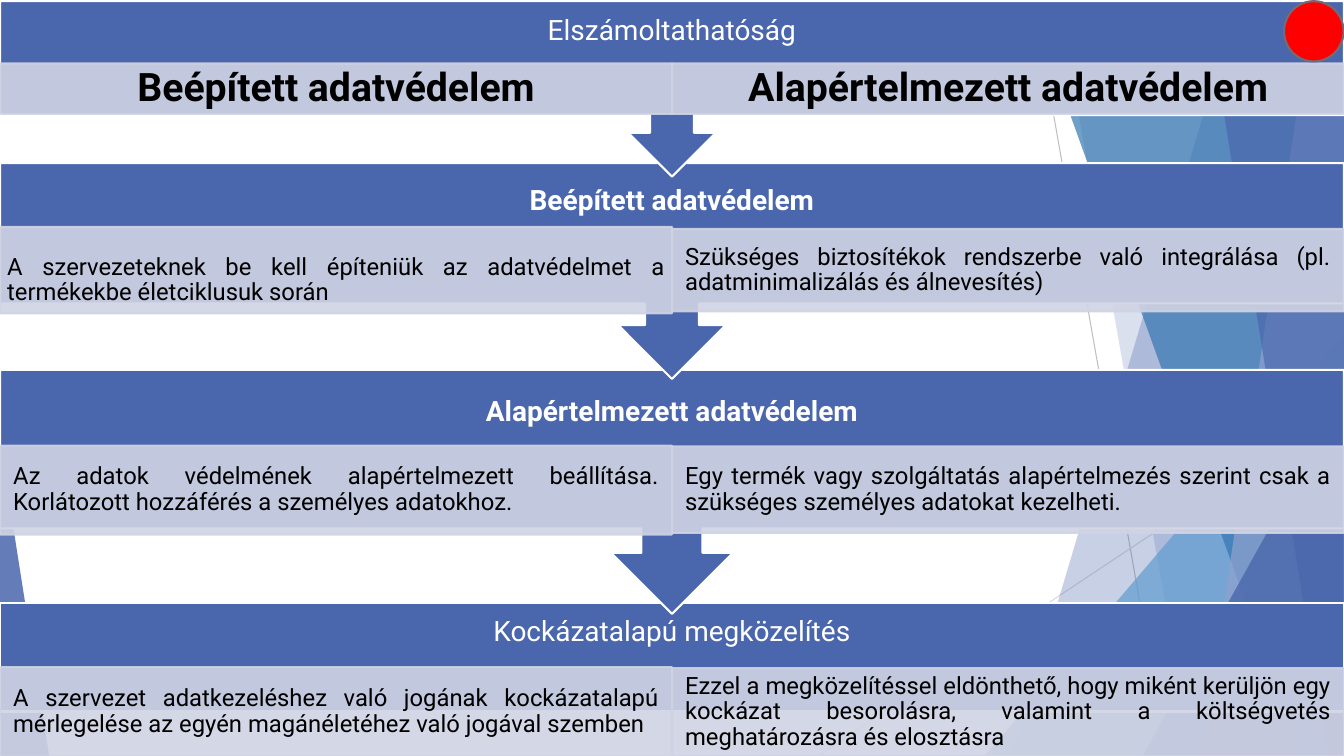
"""Builds the accountability slide: four stacked bands with paired cells over a faceted backdrop."""
from lxml.etree import SubElement
from pptx import Presentation
from pptx.dml.color import RGBColor
from pptx.enum.shapes import MSO_CONNECTOR as Connector, MSO_SHAPE as Shape
from pptx.enum.text import MSO_ANCHOR as Anchor, PP_ALIGN as Align
from pptx.oxml.ns import qn
from pptx.util import Cm, Pt

WIDTH, HEIGHT = 33.87, 19.05
HALF = WIDTH / 2
BLUE, PALE, WHITE, BLACK = "4A66AC", "D0D3E3", "FFFFFF", "000000"

RAYS = [((26.04, 0), (29.41, HEIGHT), "BFBFBF"), ((WIDTH, 10.24), (20.62, HEIGHT), "D9D9D9")]
FACETS = [
    ("panel", (31.19, 25.5), BLUE, 30),
    ("panel", (26.67, 30.05), BLUE, 20),
    ("right", (24.82, 8.46, 9.04, 10.59), "629DD1", 72),
    ("panel", (25.93, 32.79), "3477B2", 70),
    ("panel", (33.1, 30.28), "90A2CF", 70),
    ("panel", (30.38, 33.48), BLUE, 65),
    ("right", (28.8, 9.98, 5.05, 9.07), BLUE, 80),
    ("left", (0, 11.15, 1.24, 7.9), BLUE, 85),
]

HEAD = {"size": 20, "color": WHITE, "align": Align.CENTER, "insets": (0.41, 0.41, 0.41, 0.41)}
BOLD_HEAD = HEAD | {"bold": True}
BODY = {"size": 17, "color": BLACK, "align": Align.JUSTIFY, "insets": (0.33, 0.05, 0.33, 0.05)}
LOWERED = BODY | {"insets": (0.18, 0.54, 0.18, 0.03)}
TITLE = {"size": 28, "color": BLACK, "align": Align.CENTER, "bold": True,
         "insets": (0.56, 0.1, 0.56, 0.1)}

BANDS = [
    {"shape": Shape.DOWN_ARROW_CALLOUT, "top": 0.03, "height": 4.42,
     "head": ("Elszámoltathatóság", 1.55, HEAD),
     "cells": [("Beépített adatvédelem", 1.6, 1.27, TITLE),
               ("Alapértelmezett adatvédelem", 1.6, 1.27, TITLE)]},
    {"shape": Shape.DOWN_ARROW_CALLOUT, "top": 4.11, "height": 5.44,
     "head": ("Beépített adatvédelem", 1.91, BOLD_HEAD),
     "cells": [("A szervezeteknek be kell építeniük az adatvédelmet a termékekbe "
                "életciklusuk során", 5.72, 2.18, LOWERED),
               ("Szükséges biztosítékok rendszerbe való integrálása (pl. adatminimalizálás "
                "és álnevesítés)", 5.77, 2.08, BODY)]},
    {"shape": Shape.DOWN_ARROW_CALLOUT, "top": 9.32, "height": 6.15,
     "head": ("Alapértelmezett adatvédelem", 2.16, BOLD_HEAD),
     "cells": [("Az adatok védelmének alapértelmezett beállítása. Korlátozott hozzáférés "
                "a személyes adatokhoz.", 11.23, 2.24, BODY),
               ("Egy termék vagy szolgáltatás alapértelmezés szerint csak a szükséges "
                "személyes adatokat kezelheti.", 11.25, 2.18, BODY)]},
    {"shape": Shape.RECTANGLE, "top": 15.19, "height": 2.74,
     "head": ("Kockázatalapú megközelítés", 1.47, HEAD),
     "cells": [("A szervezet adatkezeléshez való jogának kockázatalapú mérlegelése az egyén "
                "magánéletéhez való jogával szemben", 16.81, 2.26, BODY),
               ("Ezzel a megközelítéssel eldönthető, hogy miként kerüljön egy kockázat "
                "besorolásra, valamint a költségvetés meghatározásra és elosztásra",
                16.84, 2.21, BODY)]},
]
MARKER = (32.36, 0.03, 1.5, 1.52)


def paint(fill, color, opacity=100):
    fill.solid()
    fill.fore_color.rgb = RGBColor.from_string(color)
    if opacity < 100:
        tone = fill._xPr.find(qn("a:solidFill"))[0]
        SubElement(tone, qn("a:alpha"), val=str(opacity * 1000))


def finish(shape, color, opacity=100, outline=None):
    shape.shadow.inherit = False
    paint(shape.fill, color, opacity)
    if outline:
        paint(shape.line.fill, outline, opacity)
        shape.line.width = Pt(1.5)
    else:
        shape.line.fill.background()


def add_preset(page, kind, bounds, color, opacity=100, outline=None):
    shape = page.shapes.add_shape(kind, *map(Cm, bounds))
    finish(shape, color, opacity, outline)
    return shape


def write(shape, text, style):
    frame = shape.text_frame
    frame.word_wrap = True
    frame.vertical_anchor = Anchor.MIDDLE
    for side, inset in zip(("left", "top", "right", "bottom"), style["insets"]):
        setattr(frame, f"margin_{side}", Cm(inset))
    para = frame.paragraphs[0]
    para.alignment = style["align"]
    para.line_spacing = 0.9
    span = para.add_run()
    span.text = text
    font = {"name": "Roboto", "size": Pt(style["size"]), "bold": style.get("bold", False)}
    for name, value in font.items():
        setattr(span.font, name, value)
    paint(span.font.fill, style["color"])


def add_backdrop(page):
    for start, end, color in RAYS:
        ray = page.shapes.add_connector(Connector.STRAIGHT, *map(Cm, start + end))
        paint(ray.line.fill, color)
        ray.line.width = Pt(0.75)
        SubElement(ray._element.spPr, qn("a:effectLst"))
    for kind, geometry, color, opacity in FACETS:
        if kind == "panel":
            top_x, bottom_x = geometry
            outline = page.shapes.build_freeform(Cm(top_x), 0)
            corners = [(WIDTH, 0), (WIDTH, HEIGHT), (bottom_x, HEIGHT)]
            outline.add_line_segments([(Cm(x), Cm(y)) for x, y in corners])
            finish(outline.convert_to_shape(), color, opacity)
        else:
            facet = add_preset(page, Shape.ISOSCELES_TRIANGLE, geometry, color, opacity)
            facet.adjustments[0] = 1 if kind == "right" else 0


def add_band(page, band):
    top = band["top"]
    add_preset(page, band["shape"], (0, top, WIDTH, band["height"]), BLUE, outline=WHITE)
    text, height, style = band["head"]
    write(page.shapes.add_textbox(*map(Cm, (0, top, WIDTH, height))), text, style)
    for column, (text, cell_top, height, style) in enumerate(band["cells"]):
        bounds = (column * HALF, cell_top, HALF, height)
        write(add_preset(page, Shape.RECTANGLE, bounds, PALE, 90, PALE), text, style)


def main():
    deck = Presentation()
    deck.slide_width, deck.slide_height = Cm(WIDTH), Cm(HEIGHT)
    page = deck.slides.add_slide(deck.slide_layouts[6])
    paint(page.background.fill, WHITE)
    add_backdrop(page)
    for band in reversed(BANDS):
        add_band(page, band)
    add_preset(page, Shape.OVAL, MARKER, "FF0000", outline="746B76")
    deck.save("out.pptx")


if __name__ == "__main__":
    main()
